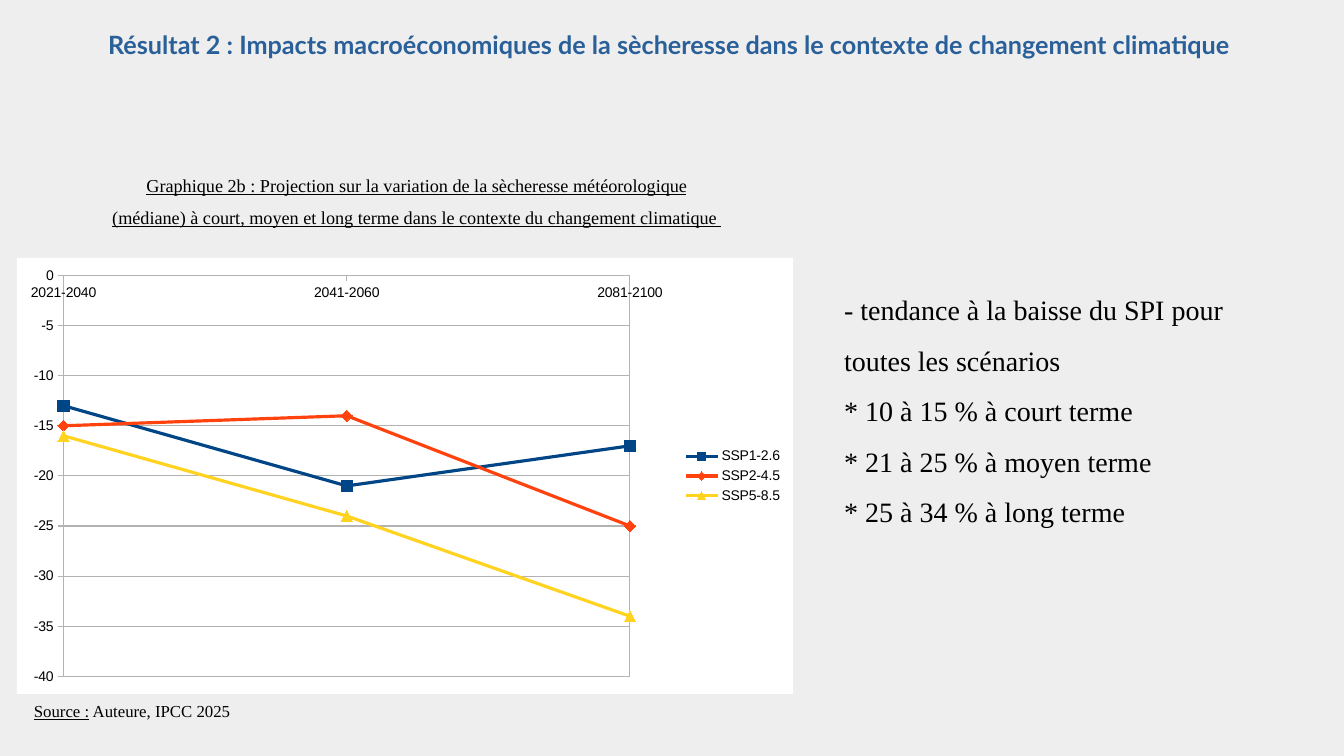
from lxml import etree
from pptx import Presentation
from pptx.chart.data import CategoryChartData
from pptx.dml.color import RGBColor
from pptx.enum.chart import XL_CHART_TYPE, XL_LEGEND_POSITION, XL_MARKER_STYLE, XL_TICK_MARK
from pptx.enum.text import MSO_ANCHOR, MSO_AUTO_SIZE, PP_ALIGN
from pptx.oxml import parse_xml
from pptx.oxml.ns import qn
from pptx.util import Emu, Pt

LINE_MARKERS = XL_CHART_TYPE.LINE_MARKERS
RIGHT = XL_LEGEND_POSITION.RIGHT
SQUARE, DIAMOND, TRIANGLE = XL_MARKER_STYLE.SQUARE, XL_MARKER_STYLE.DIAMOND, XL_MARKER_STYLE.TRIANGLE
OUTSIDE, NO_TICK = XL_TICK_MARK.OUTSIDE, XL_TICK_MARK.NONE
TOP, NO_FIT = MSO_ANCHOR.TOP, MSO_AUTO_SIZE.NONE
LEFT, CENTER = PP_ALIGN.LEFT, PP_ALIGN.CENTER

COLORS = {
    "bg": "EEEEEE", "title": "2A6099", "text": "000000", "white": "FFFFFF", "grid": "B3B3B3",
    "blue": "004586", "orange": "FF420E", "yellow": "FFD320",
}
SERIF = "Times New Roman"
NAMESPACES = (
    'xmlns:c="http://schemas.openxmlformats.org/drawingml/2006/chart" '
    'xmlns:a="http://schemas.openxmlformats.org/drawingml/2006/main"'
)
PERIODS = ["2021-2040", "2041-2060", "2081-2100"]
SCENARIOS = [
    ("SSP1-2.6", (-13, -21, -17), "blue", SQUARE),
    ("SSP2-4.5", (-15, -14, -25), "orange", DIAMOND),
    ("SSP5-8.5", (-16, -24, -34), "yellow", TRIANGLE),
]
FINDINGS = [
    "- tendance à la baisse du SPI pour toutes les scénarios",
    "* 10 à 15 % à court terme",
    "* 21 à 25 % à moyen terme",
    "* 25 à 34 % à long terme",
]


def px(n):
    return Emu(round(n * 914400 / 100.8))


def rgb(name):
    return RGBColor.from_string(COLORS[name])


class Deck:
    def __init__(self):
        self.prs = Presentation()
        self.prs.slide_width, self.prs.slide_height = px(1344), px(756)
        self.s = self.prs.slides.add_slide(self.prs.slide_layouts[1])
        self.s.background.fill.solid()
        self.s.background.fill.fore_color.rgb = rgb("bg")

    def style(self, font, size, name=SERIF, color="text", bold=False, underline=None):
        font.size, font.name, font.bold, font.underline = Pt(size), name, bold, underline
        font.color.rgb = rgb(color)

    def fill_text(self, sp, box, paragraphs, size, align=LEFT, spacing=1.5, **font):
        sp.left, sp.top, sp.width, sp.height = map(px, box)
        tf = sp.text_frame
        tf.word_wrap, tf.auto_size, tf.vertical_anchor = True, NO_FIT, TOP
        for i, runs in enumerate(paragraphs):
            p = tf.add_paragraph() if i else tf.paragraphs[0]
            p.alignment, p.line_spacing = align, spacing
            p.space_before = Pt(0)
            self.style(p.font, size, **font)
            for text, underline in runs:
                r = p.add_run()
                r.text = text
                self.style(r.font, size, **{**font, "underline": underline})
        return tf

    def title(self, box, text):
        self.fill_text(self.s.shapes.title, box, [[(text, None)]], 18, CENTER, 1.15,
                       name="Lato", color="title", bold=True)

    def body(self, box, lines):
        tf = self.fill_text(self.s.placeholders[1], box, [[(t, None)] for t in lines], 20)
        for p in tf.paragraphs:
            pPr = p._p.get_or_add_pPr()
            pPr.set("marL", "0")
            pPr.set("indent", "0")
            bullet = etree.Element(qn("a:buNone"))
            pPr.insert_element_before(bullet, "a:tabLst", "a:defRPr", "a:extLst")

    def text(self, box, runs, size, align=LEFT):
        sp = self.s.shapes.add_textbox(*map(px, box))
        self.fill_text(sp, box, [runs], size, align)

    def hairline(self, line):
        line.color.rgb = rgb("grid")
        line.width = Pt(0)

    def line_chart(self, box, categories, scenarios):
        data = CategoryChartData()
        data.categories = categories
        for name, values, _, _ in scenarios:
            data.add_series(name, values)
        chart = self.s.shapes.add_chart(LINE_MARKERS, *map(px, box), data).chart
        chart.has_title = False
        chart.has_legend = True
        chart.legend.position = RIGHT
        chart.legend.include_in_layout = False
        for owner in (chart, chart.legend, chart.category_axis.tick_labels, chart.value_axis.tick_labels):
            self.style(owner.font, 10, "Arial")
        for axis in (chart.category_axis, chart.value_axis):
            axis.major_tick_mark, axis.minor_tick_mark = OUTSIDE, NO_TICK
            self.hairline(axis.format.line)
        value_axis = chart.value_axis
        value_axis.minimum_scale, value_axis.maximum_scale, value_axis.major_unit = -40, 0, 5
        self.hairline(value_axis.major_gridlines.format.line)
        chart.plots[0].vary_by_categories = False
        for series, (_, _, color, marker) in zip(chart.plots[0].series, scenarios):
            series.smooth = False
            series.format.line.color.rgb = rgb(color)
            series.format.line.width = Pt(2.27)
            series.marker.style, series.marker.size = marker, 8
            series.marker.format.fill.solid()
            series.marker.format.fill.fore_color.rgb = rgb(color)
            series.marker.format.line.color.rgb = rgb(color)
        self.frame_chart(chart._chartSpace)

    def frame_chart(self, space):
        area = space.find(".//" + qn("c:plotArea"))
        for old in area.findall(qn("c:layout")):
            area.remove(old)
        places = "".join(f'<c:{k} val="{v}"/>' for k, v in
                         (("x", 0.06), ("y", 0.04), ("w", 0.73), ("h", 0.92)))
        area.insert(0, parse_xml(
            f'<c:layout {NAMESPACES}><c:manualLayout><c:layoutTarget val="inner"/>'
            f'<c:xMode val="edge"/><c:yMode val="edge"/>{places}</c:manualLayout></c:layout>'))
        area.append(parse_xml(
            f'<c:spPr {NAMESPACES}><a:noFill/><a:ln w="0"><a:solidFill>'
            f'<a:srgbClr val="{COLORS["grid"]}"/></a:solidFill></a:ln></c:spPr>'))
        value_axis = area.find(qn("c:valAx"))
        cross = value_axis.find(qn("c:crossBetween"))
        if cross is None:
            cross = etree.Element(qn("c:crossBetween"))
            value_axis.find(qn("c:crosses")).addnext(cross)
        cross.set("val", "midCat")
        space.find(qn("c:chart")).addnext(parse_xml(
            f'<c:spPr {NAMESPACES}><a:solidFill><a:srgbClr val="{COLORS["white"]}"/></a:solidFill>'
            '<a:ln><a:noFill/></a:ln></c:spPr>'))


def main():
    deck = Deck()
    deck.title((68, 20, 1202, 80), "Résultat 2 : Impacts macroéconomiques de la sècheresse "
               "dans le contexte de changement climatique")
    deck.text((24, 686, 412, 37), [("Source :", True), (" Auteure, IPCC 2025", False)], 12)
    deck.line_chart((17, 258, 776, 436), PERIODS, SCENARIOS)
    deck.text((99, 158, 635, 100), [(
        "Graphique 2b : Projection sur la variation de la sècheresse météorologique (médiane) "
        "à court, moyen et long terme dans le contexte du changement climatique ", True)], 13, CENTER)
    deck.body((834, 271, 457, 243), FINDINGS)
    deck.prs.save("out.pptx")


if __name__ == "__main__":
    main()
